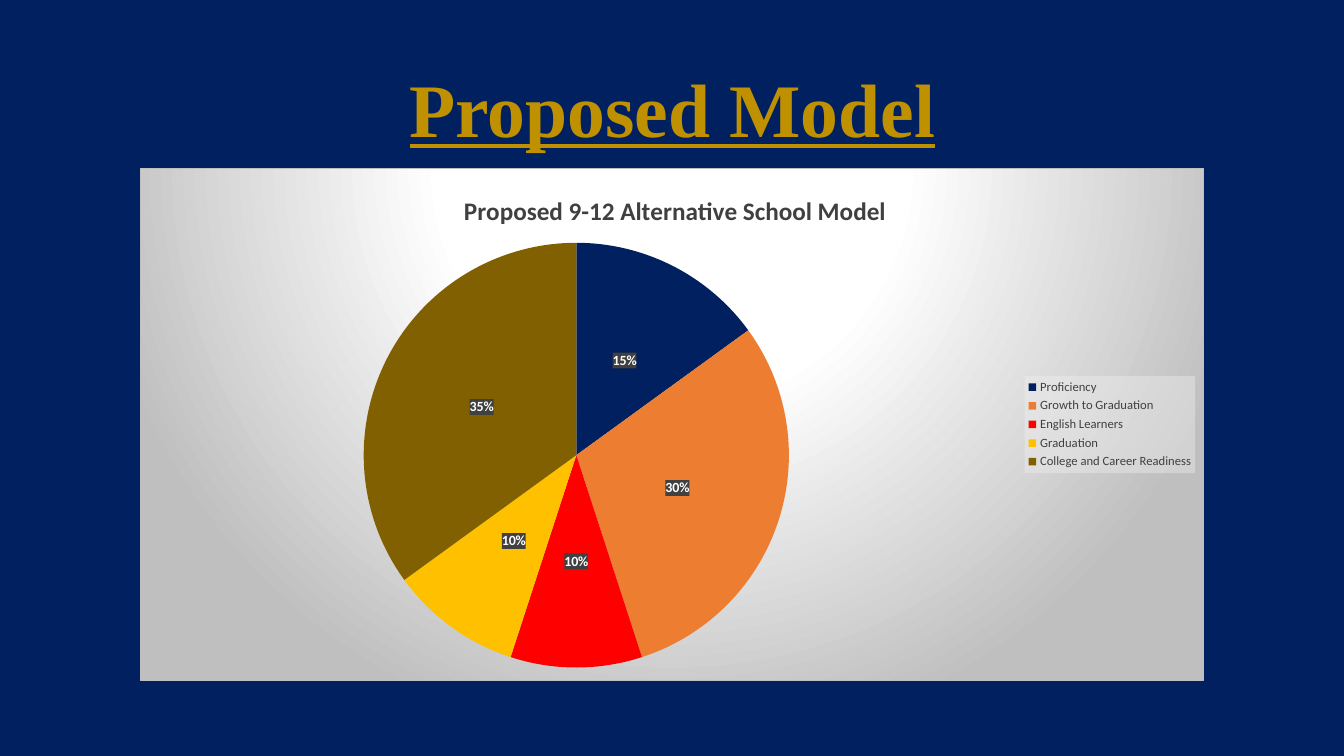
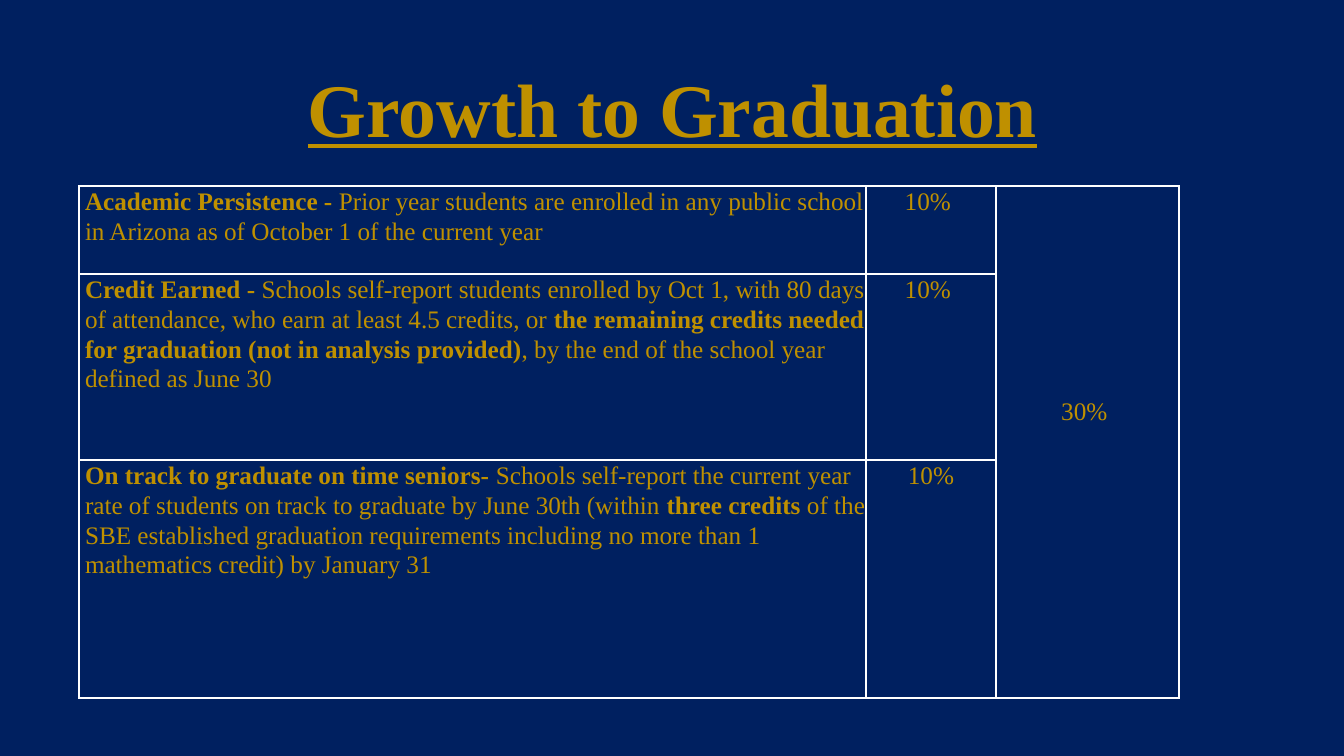
import lxml.etree
import pptx
import pptx.chart.data
import pptx.dml.color
import pptx.enum.chart
import pptx.enum.text
import pptx.oxml
import pptx.oxml.ns
import pptx.util

EMU_PER_PX = 914400 / 100.8
SLIDE_WIDTH, SLIDE_HEIGHT = 1344, 756
SERIF, SANS = "Times New Roman", "Calibri"
COLORS = {
    "navy": "002060",
    "gold": "BF9000",
    "white": "FFFFFF",
    "silver": "BFBFBF",
    "pale": "F2F2F2",
    "charcoal": "404040",
    "orange": "ED7D31",
    "red": "FF0000",
    "yellow": "FFC000",
    "olive": "806000",
}
TITLE_BOX = (93, 40, 1159, 146)
CHART_BOX = (140, 168, 1064, 513)
TABLE_BOX = (79, 186, 1100, 512)

PIE_SLICES = [
    ("Proficiency", 15, "navy"),
    ("Growth to Graduation", 30, "orange"),
    ("English Learners", 10, "red"),
    ("Graduation", 10, "yellow"),
    ("College and Career Readiness", 35, "olive"),
]
COLUMN_WIDTHS = (787, 130, 183)
ROW_HEIGHTS = (88, 186, 238)
# Each measure: its text as (words, bold) runs, then its weight
MEASURES = [
    ([("Academic Persistence - ", True),
      ("Prior year students are enrolled in any public school in Arizona "
       "as of October 1 of the current year", False)], "10% "),
    ([("Credit Earned - ", True),
      ("Schools self-report students enrolled by Oct 1, with 80 days of "
       "attendance, who earn at least 4.5 credits, or ", False),
      ("the remaining credits needed for graduation "
       "(not in analysis provided)", True),
      (", by the end of the school year defined as June 30", False)], "10% "),
    ([("On track to graduate on time seniors- ", True),
      ("Schools self-report the current year rate of students on track to "
       "graduate by June 30th (within ", False),
      ("three credits", True),
      (" of the SBE established graduation requirements including no more "
       "than 1 mathematics credit) by January 31", False)], "10%"),
]
TOTAL_WEIGHT = "30% "


def px(length):
    return pptx.util.Emu(round(length * EMU_PER_PX))


def rgb(name):
    return pptx.dml.color.RGBColor.from_string(COLORS[name])


def style_font(font, size, color, name, bold=False):
    font.size = pptx.util.Pt(size)
    font.name = name
    font.bold = bold
    font.color.rgb = rgb(color)


def parse_drawing(xml):
    """Parse XML whose root element takes the drawing and chart namespaces."""
    head, separator, rest = xml.partition(">")
    declarations = pptx.oxml.ns.nsdecls("a", "c")
    if head.endswith("/"):
        head, separator = head[:-1], "/>"
    return pptx.oxml.parse_xml(f"{head} {declarations}{separator}{rest}")


def set_background(chart_part, fill_xml):
    """Give a chart part a fill; its font must be set beforehand."""
    text_properties = chart_part.find(pptx.oxml.ns.qn("c:txPr"))
    text_properties.addprevious(parse_drawing(f"<c:spPr>{fill_xml}</c:spPr>"))


def translucent_fill(color, percent):
    return (f'<a:solidFill><a:srgbClr val="{COLORS[color]}">'
            f'<a:alpha val="{percent * 1000}"/></a:srgbClr></a:solidFill>')


def set_layout(chart_part, index, fractions, inner=False):
    """Fix the place of a chart part as fractions of the chart."""
    for layout in chart_part.findall(pptx.oxml.ns.qn("c:layout")):
        chart_part.remove(layout)
    target = '<c:layoutTarget val="inner"/>' if inner else ""
    modes = "".join(f'<c:{axis}Mode val="edge"/>' for axis in "xy")
    values = "".join(f'<c:{key} val="{value}"/>'
                     for key, value in zip("xywh", fractions))
    chart_part.insert(index, parse_drawing(
        f"<c:layout><c:manualLayout>{target}{modes}{values}"
        "</c:manualLayout></c:layout>"))


def add_titled_slide(presentation, title):
    slide = presentation.slides.add_slide(presentation.slide_layouts[6])
    slide.background.fill.solid()
    slide.background.fill.fore_color.rgb = rgb("navy")
    text_frame = slide.shapes.add_textbox(*map(px, TITLE_BOX)).text_frame
    text_frame.word_wrap = True
    text_frame.vertical_anchor = pptx.enum.text.MSO_ANCHOR.MIDDLE
    text_frame.text = title
    paragraph = text_frame.paragraphs[0]
    paragraph.alignment = pptx.enum.text.PP_ALIGN.CENTER
    paragraph.line_spacing = 0.9
    font = paragraph.runs[0].font
    style_font(font, 54, "gold", SERIF, bold=True)
    font.underline = True
    return slide


def add_model_chart(slide, box):
    chart_data = pptx.chart.data.CategoryChartData()
    chart_data.categories = [name for name, _, _ in PIE_SLICES]
    chart_data.add_series("Series 1", [value for _, value, _ in PIE_SLICES])
    chart = slide.shapes.add_chart(
        pptx.enum.chart.XL_CHART_TYPE.PIE, *map(px, box), chart_data).chart
    chart.font.size = pptx.util.Pt(10)
    chart.font.name = SANS
    set_background(chart.element, (
        '<a:gradFill><a:gsLst>'
        f'<a:gs pos="0"><a:srgbClr val="{COLORS["white"]}"/></a:gs>'
        f'<a:gs pos="39000"><a:srgbClr val="{COLORS["white"]}"/></a:gs>'
        f'<a:gs pos="100000"><a:srgbClr val="{COLORS["silver"]}"/></a:gs>'
        '</a:gsLst><a:path path="circle">'
        '<a:fillToRect l="50000" t="-80000" r="50000" b="180000"/>'
        '</a:path></a:gradFill>'
        f'<a:ln w="9525"><a:solidFill><a:srgbClr val="{COLORS["silver"]}"/>'
        '</a:solidFill></a:ln>'))

    chart.has_title = True
    title_frame = chart.chart_title.text_frame
    title_frame.text = "Proposed 9-12 Alternative School Model"
    style_font(title_frame.paragraphs[0].runs[0].font, 18, "charcoal", SANS,
               bold=True)
    chart.chart_title.include_in_layout = False
    set_layout(chart.chart_title.element, 1, (0.3, 0.04))

    chart.has_legend = True
    legend = chart.legend
    legend.position = pptx.enum.chart.XL_LEGEND_POSITION.RIGHT
    legend.include_in_layout = False
    style_font(legend.font, 9, "charcoal", SANS)
    set_background(legend._element, translucent_fill("pale", 39))

    plot = chart.plots[0]
    plot.vary_by_categories = True
    set_layout(plot._element.getparent(), 0, (0.21, 0.14, 0.4, 0.84),
               inner=True)
    for index, (_, _, color) in enumerate(PIE_SLICES):
        fill = plot.series[0].points[index].format.fill
        fill.solid()
        fill.fore_color.rgb = rgb(color)

    plot.has_data_labels = True
    labels = plot.data_labels
    labels.show_value = False
    labels.show_percentage = True
    labels.number_format = "0%"
    labels.number_format_is_linked = False
    labels.position = pptx.enum.chart.XL_LABEL_POSITION.CENTER
    style_font(labels.font, 10, "white", SANS, bold=True)
    set_background(labels._element, translucent_fill("charcoal", 75))


def style_cell(cell):
    """Fill the cell, draw its borders and clear its margins."""
    cell.fill.solid()
    cell.fill.fore_color.rgb = rgb("navy")
    cell.margin_left = cell.margin_right = 0
    cell.margin_top = cell.margin_bottom = 0
    properties = cell._tc.get_or_add_tcPr()
    for index, side in enumerate("LRTB"):
        properties.insert(index, parse_drawing(
            f'<a:ln{side} w="12700"><a:solidFill>'
            f'<a:srgbClr val="{COLORS["white"]}"/></a:solidFill></a:ln{side}>'))


def write_cell(cell, runs, centered=False):
    paragraph = cell.text_frame.paragraphs[0]
    paragraph.line_spacing = 1.07
    paragraph.space_after = pptx.util.Pt(8)
    if centered:
        paragraph.alignment = pptx.enum.text.PP_ALIGN.CENTER
    else:
        cell.margin_left = px(6)
    for words, bold in runs:
        run = paragraph.add_run()
        run.text = words
        style_font(run.font, 18, "gold", SERIF, bold)


def add_growth_table(slide, box):
    table = slide.shapes.add_table(
        len(ROW_HEIGHTS), len(COLUMN_WIDTHS), *map(px, box)).table
    table.first_row = table.horz_banding = False
    for column, width in zip(table.columns, COLUMN_WIDTHS):
        column.width = px(width)
    for row, height in zip(table.rows, ROW_HEIGHTS):
        row.height = px(height)
    for cell in table.iter_cells():
        style_cell(cell)
    for index, (runs, weight) in enumerate(MEASURES):
        write_cell(table.cell(index, 0), runs)
        write_cell(table.cell(index, 1), [(weight, False)], centered=True)
    total = table.cell(0, 2)
    total.merge(table.cell(len(ROW_HEIGHTS) - 1, 2))
    total.vertical_anchor = pptx.enum.text.MSO_ANCHOR.MIDDLE
    total.margin_bottom = px(62)
    write_cell(total, [(TOTAL_WEIGHT, False)], centered=True)


def main():
    presentation = pptx.Presentation()
    presentation.slide_width = px(SLIDE_WIDTH)
    presentation.slide_height = px(SLIDE_HEIGHT)
    add_model_chart(add_titled_slide(presentation, "Proposed Model"), CHART_BOX)
    add_growth_table(add_titled_slide(presentation, "Growth to Graduation"),
                     TABLE_BOX)
    presentation.save("out.pptx")


if __name__ == "__main__":
    main()
